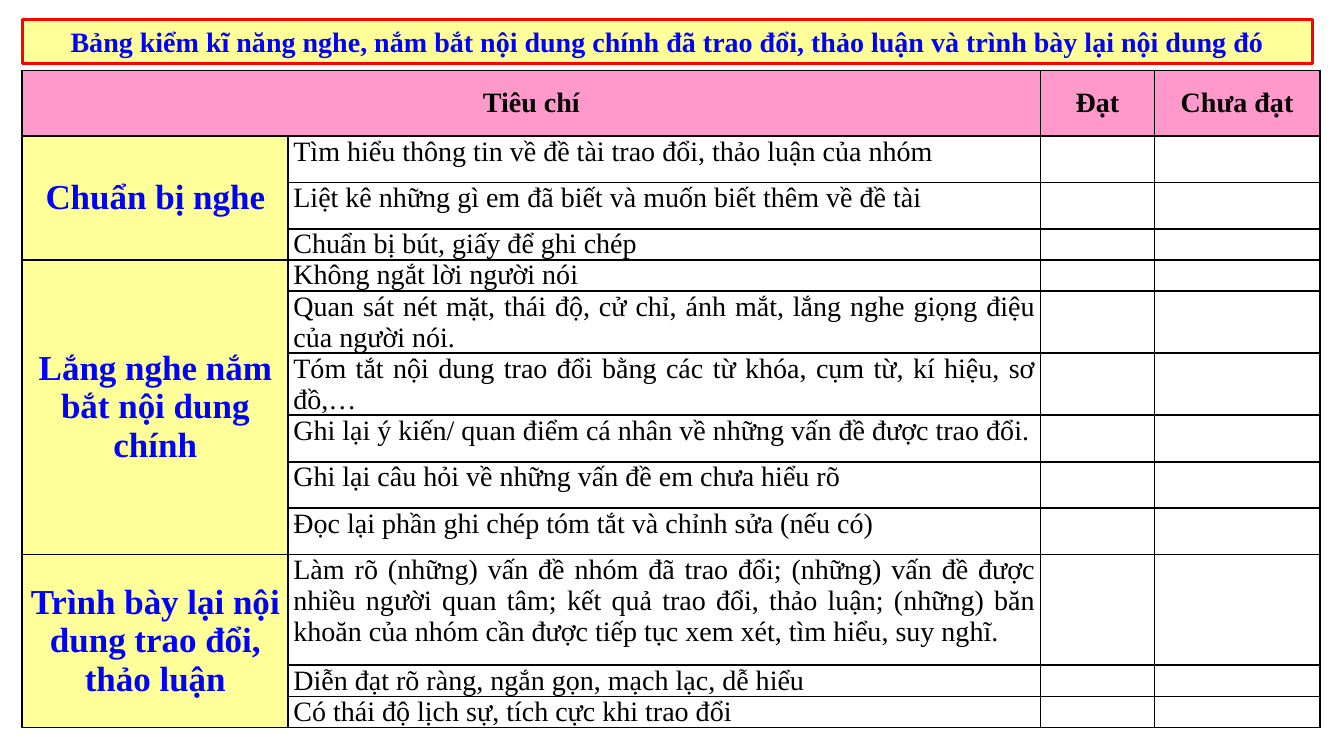
from lxml.etree import SubElement
from pptx import Presentation
from pptx.dml.color import RGBColor
from pptx.enum.text import MSO_ANCHOR as Anchor, MSO_AUTO_SIZE as AutoSize, PP_ALIGN as Align
from pptx.oxml.ns import qn
from pptx.util import Emu, Pt

PX = 9144  # 100 px to the inch
PINK, YELLOW, BLUE, BLACK, RED = "FF99CC", "FFFF99", "0000FF", "000000", "FF0000"

TITLE = ("Bảng kiểm kĩ năng nghe, nắm bắt nội dung chính đã trao đổi, "
         "thảo luận và trình bày lại nội dung đó")
COLUMN_WIDTHS = [264, 746, 113, 164]
HEADER_HEIGHT = 65
# Each stage has its criteria with their row heights.
STAGES = [
    ("Chuẩn bị nghe", [
        ("Tìm hiểu thông tin về đề tài trao đổi, thảo luận của nhóm", 46),
        ("Liệt kê những gì em đã biết và muốn biết thêm về đề tài", 46),
        ("Chuẩn bị bút, giấy để ghi chép", 30),
    ]),
    ("Lắng nghe nắm bắt nội dung chính", [
        ("Không ngắt lời người nói", 30),
        ("Quan sát nét mặt, thái độ, cử chỉ, ánh mắt, lắng nghe giọng điệu của người nói.", 60),
        ("Tóm tắt nội dung trao đổi bằng các từ khóa, cụm từ, kí hiệu, sơ đồ,…", 60),
        ("Ghi lại ý kiến/ quan điểm cá nhân về những vấn đề được trao đổi.", 46),
        ("Ghi lại câu hỏi về những vấn đề em chưa hiểu rõ", 46),
        ("Đọc lại phần ghi chép tóm tắt và chỉnh sửa (nếu có)", 46),
    ]),
    ("Trình bày lại nội dung trao đổi, thảo luận", [
        ("Làm rõ (những) vấn đề nhóm đã trao đổi; (những) vấn đề được nhiều người quan tâm; "
         "kết quả trao đổi, thảo luận; (những) băn khoăn của nhóm cần được tiếp tục xem xét, "
         "tìm hiểu, suy nghĩ.", 110),
        ("Diễn đạt rõ ràng, ngắn gọn, mạch lạc, dễ hiểu", 30),
        ("Có thái độ lịch sự, tích cực khi trao đổi", 30),
    ]),
]


def px(length):
    return Emu(length * PX)


def rgb(value):
    return RGBColor.from_string(value)


class ChecklistSlide:
    font_name = "Times New Roman"
    border_width = Pt(1.5)

    def __init__(self, deck):
        self.slide = deck.slides.add_slide(deck.slide_layouts[5])

    def set_text(self, frame, text, size=20, color=BLACK, bold=False, align=Align.CENTER):
        frame.text = text
        paragraph = frame.paragraphs[0]
        paragraph.alignment = align
        font = paragraph.font
        font.name, font.size, font.bold = self.font_name, Pt(size), bold
        font.color.rgb = rgb(color)

    def title(self, text, left, top, width, height):
        banner = self.slide.shapes.title
        banner.left, banner.top, banner.width, banner.height = map(px, (left, top, width, height))
        banner.fill.solid()
        banner.fill.fore_color.rgb = rgb(YELLOW)
        banner.line.color.rgb = rgb(RED)
        banner.line.width = Pt(2.25)
        frame = banner.text_frame
        frame.word_wrap = True
        frame.auto_size = AutoSize.NONE
        frame.vertical_anchor = Anchor.MIDDLE
        self.set_text(frame, text, color=BLUE, bold=True)

    def table(self, left, top, widths, heights):
        """Add an empty grid with plain borders and no banding."""
        grid = self.slide.shapes.add_table(
            len(heights), len(widths), px(left), px(top),
            px(sum(widths)), px(sum(heights))).table
        grid.first_row = grid.horz_banding = False
        for column, width in zip(grid.columns, widths):
            column.width = px(width)
        for row, height in zip(grid.rows, heights):
            row.height = px(height)
        for cell in grid.iter_cells():
            cell.margin_left = cell.margin_right = px(5)
            cell.margin_top = cell.margin_bottom = 0
            self.border(cell)
            cell.fill.background()
            self.set_text(cell.text_frame, "")
        return grid

    def border(self, cell):
        properties = cell._tc.get_or_add_tcPr()
        for side in ("a:lnL", "a:lnR", "a:lnT", "a:lnB"):
            edge = SubElement(properties, qn(side), w=str(self.border_width))
            fill = SubElement(edge, qn("a:solidFill"))
            SubElement(fill, qn("a:srgbClr"), val=BLACK)

    def heading(self, cell, text, fill, **style):
        cell.fill.solid()
        cell.fill.fore_color.rgb = rgb(fill)
        cell.vertical_anchor = Anchor.MIDDLE
        self.set_text(cell.text_frame, text, bold=True, **style)


def main():
    deck = Presentation()
    deck.slide_width, deck.slide_height = px(1333), px(750)
    page = ChecklistSlide(deck)
    page.title(TITLE, 22, 19, 1280, 44)

    heights = [HEADER_HEIGHT] + [height for _, criteria in STAGES for _, height in criteria]
    checklist = page.table(22, 70, COLUMN_WIDTHS, heights)
    checklist.cell(0, 0).merge(checklist.cell(0, 1))
    for column, label in ((0, "Tiêu chí"), (2, "Đạt"), (3, "Chưa đạt")):
        page.heading(checklist.cell(0, column), label, PINK)

    first = 1
    for stage, criteria in STAGES:
        stage_cell = checklist.cell(first, 0)
        stage_cell.merge(checklist.cell(first + len(criteria) - 1, 0))
        page.heading(stage_cell, stage, YELLOW, size=25, color=BLUE)
        for row, (criterion, _) in enumerate(criteria, first):
            page.set_text(checklist.cell(row, 1).text_frame, criterion, align=Align.JUSTIFY)
        first += len(criteria)

    deck.save("out.pptx")


if __name__ == "__main__":
    main()
